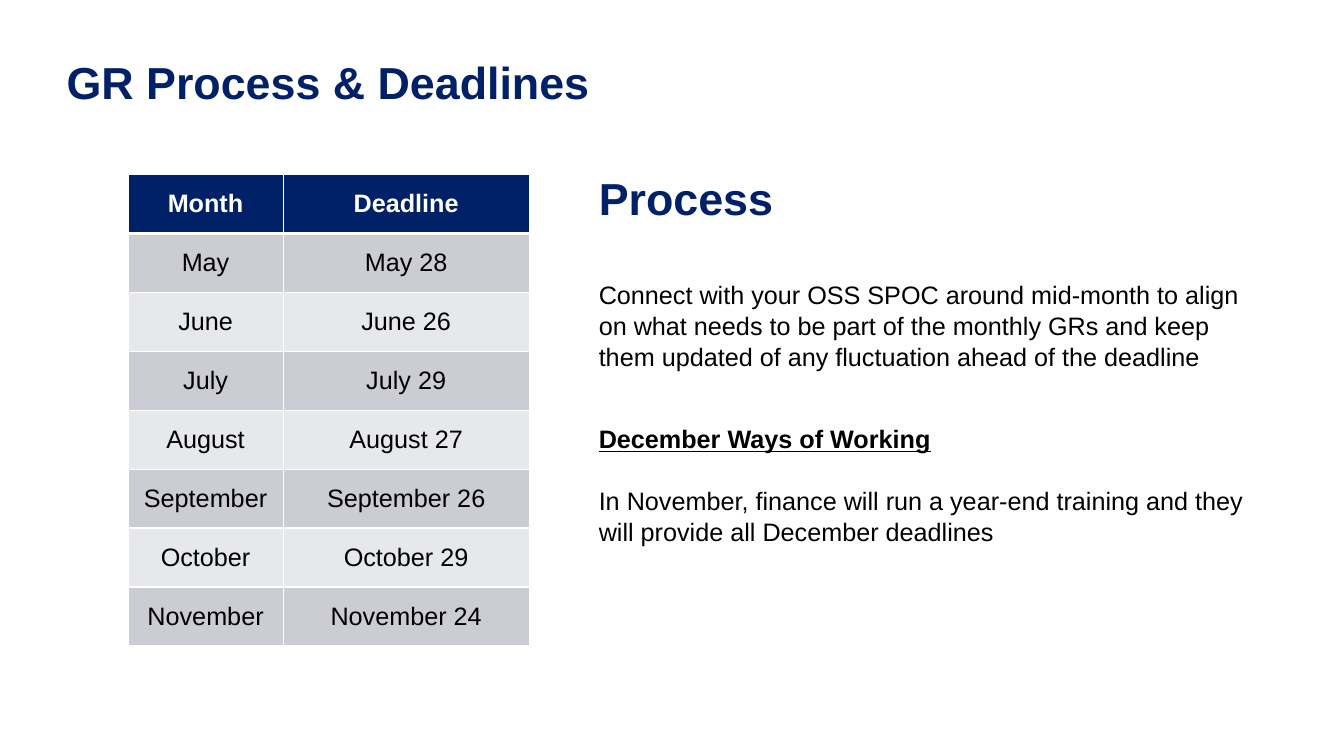
from pptx import Presentation
from pptx.util import Pt
from pptx.dml.color import RGBColor
from pptx.enum.text import PP_ALIGN as Align, MSO_ANCHOR as Anchor, MSO_AUTO_SIZE as Fit
from pptx.oxml import parse_xml
from pptx.oxml.ns import nsdecls

NAVY, BLACK, WHITE = "002068", "000000", "FFFFFF"
BANDS = ("CCCDD4", "E7E8EB")
TOP = 124.6

DATES = [
    ("Month", "Deadline"),
    ("May", "May 28"),
    ("June", "June 26"),
    ("July", "July 29"),
    ("August", "August 27"),
    ("September", "September 26"),
    ("October", "October 29"),
    ("November", "November 24"),
]

# Text, size, colour, bold, underline, line spacing, space before
STEPS = [
    ("Process", 32, NAVY, True, False, 0.95, 0),
    ("Connect with your OSS SPOC around mid-month to align on what needs to be "
     "part of the monthly GRs and keep them updated of any fluctuation ahead of "
     "the deadline", 18, BLACK, False, False, 1.03, 37.5),
    ("December Ways of Working", 18, BLACK, True, True, 1.03, 36.5),
    ("In November, finance will run a year-end training and they will provide "
     "all December deadlines", 18, BLACK, False, False, 1.03, 22),
]


def paint(color, code):
    color.rgb = RGBColor.from_string(code)


def add_run(para, text, size, code, bold=False, line=False):
    run = para.add_run()
    run.text = text
    font = run.font
    font.name, font.size, font.bold = "Arial", Pt(size), bold
    if line:
        font.underline = True
    paint(font.color, code)


def place(shape, left, top, width, height):
    """Move a placeholder and clear its margins."""
    shape.left, shape.top = Pt(left), Pt(top)
    shape.width, shape.height = Pt(width), Pt(height)
    frame = shape.text_frame
    frame.margin_left = frame.margin_right = 0
    frame.margin_top = frame.margin_bottom = 0
    frame.word_wrap = True
    frame.auto_size = Fit.NONE
    frame.vertical_anchor = Anchor.TOP
    return frame


def add_title(shape, text):
    para = place(shape, 47.5, 41.8, 759.6, 84.2).paragraphs[0]
    para.alignment = Align.LEFT
    para.line_spacing = 0.95
    add_run(para, text, 32, NAVY, True)


def add_steps(shape):
    frame = place(shape, 427.7, TOP, 473, 337)
    for i, (text, size, code, bold, line, space, gap) in enumerate(STEPS):
        para = frame.add_paragraph() if i else frame.paragraphs[0]
        para.line_spacing = space
        para.space_before = Pt(gap)
        props = para._p.get_or_add_pPr()
        props.set("marL", "0")
        props.set("indent", "0")
        props.append(parse_xml(f"<a:buNone {nsdecls('a')}/>"))
        add_run(para, text, size, code, bold, line)


def add_edges(cell, **widths):
    """Draw white borders; keys are the sides L, R, T and B."""
    props = cell._tc.get_or_add_tcPr()
    for side, width in widths.items():
        props.append(parse_xml(
            f'<a:ln{side} {nsdecls("a")} w="{Pt(width)}"><a:solidFill>'
            f'<a:srgbClr val="{WHITE}"/></a:solidFill></a:ln{side}>'))


def add_dates(slide):
    widths, high = (110.9, 175.7), 42.12
    frame = slide.shapes.add_table(len(DATES), 2, Pt(91.4), Pt(TOP),
                                   Pt(sum(widths)), Pt(high * len(DATES)))
    table = frame.table
    for col, width in zip(table.columns, widths):
        col.width = Pt(width)
    for i, pair in enumerate(DATES):
        table.rows[i].height = Pt(high)
        head = i == 0
        for j, text in enumerate(pair):
            cell = table.cell(i, j)
            add_edges(cell, L=1, R=1, T=3 if i == 1 else 1, B=3 if head else 1)
            cell.fill.solid()
            paint(cell.fill.fore_color, NAVY if head else BANDS[(i - 1) % 2])
            cell.vertical_anchor = Anchor.MIDDLE
            para = cell.text_frame.paragraphs[0]
            para.alignment = Align.CENTER
            add_run(para, text, 18, WHITE if head else BLACK, head)


def main():
    deck = Presentation()
    deck.slide_width, deck.slide_height = Pt(960), Pt(540)
    slide = deck.slides.add_slide(deck.slide_layouts[1])
    # Heading, deadline table, process text
    add_title(slide.shapes.title, "GR Process & Deadlines")
    add_dates(slide)
    add_steps(slide.placeholders[1])
    deck.save("out.pptx")


if __name__ == "__main__":
    main()
